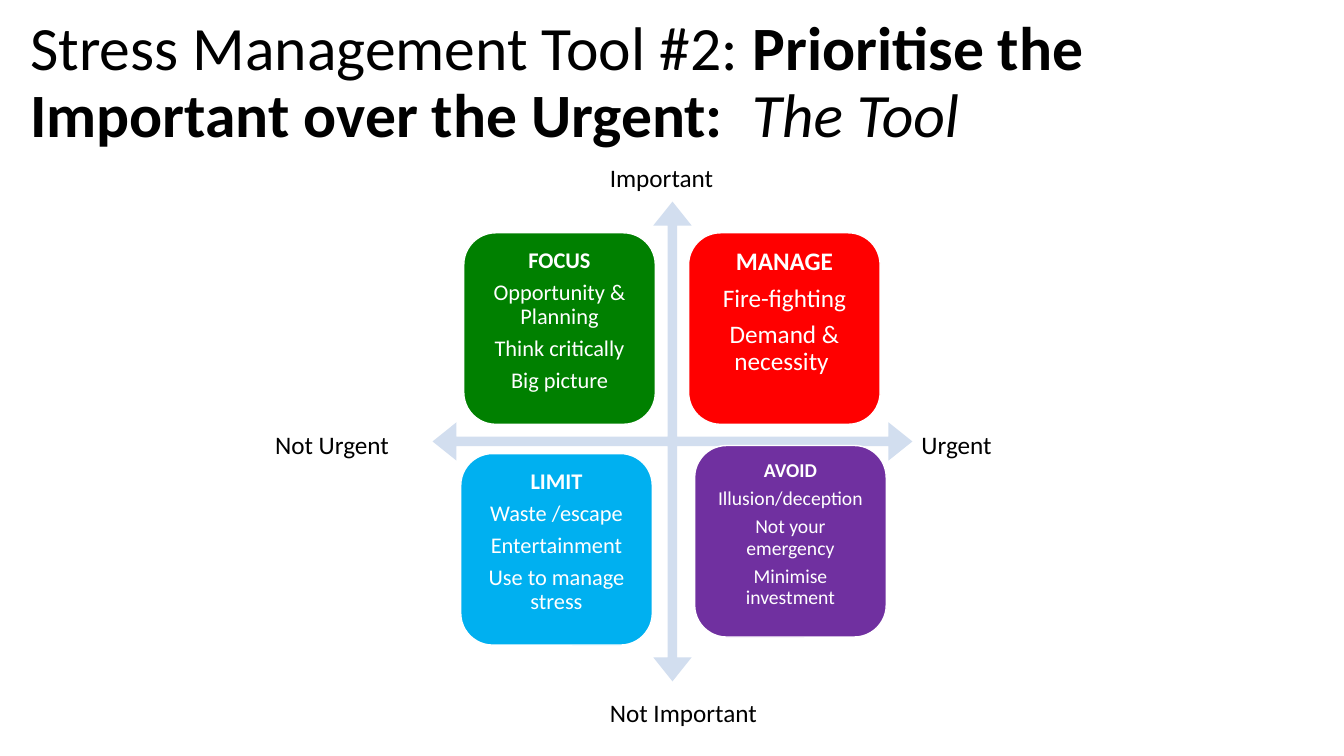
from pptx import Presentation
from pptx import util as u
from pptx.dml.color import RGBColor
from pptx.enum import shapes, text

HUE = {"ink": "000000", "white": "FFFFFF", "axis": "D2DEEF", "focus": "008000",
       "manage": "FF0000", "avoid": "7030A0", "limit": "00B0F0"}
SIDE = 1.9  # edge of a quadrant tile, inches


def paint(part, hue):
    part.solid()
    part.fore_color.rgb = RGBColor.from_string(HUE[hue])


def write(para, words, size, hue, bold=False, italic=False):
    run = para.add_run()
    run.text = words
    look = {"name": "Calibri", "size": u.Pt(size), "bold": bold, "italic": italic}
    for key, value in look.items():
        setattr(run.font, key, value)
    paint(run.font.fill, hue)


deck = Presentation()
deck.slide_width, deck.slide_height = u.Inches(13.33), u.Inches(7.5)
slide = deck.slides.add_slide(deck.slide_layouts[5])

# Title
title = slide.shapes.title
title.left, title.top, title.width, title.height = map(u.Inches, (0.2, 0.11, 11.5, 1.45))
frame = title.text_frame
frame.auto_size = text.MSO_AUTO_SIZE.NONE
frame.vertical_anchor = text.MSO_ANCHOR.MIDDLE
para = frame.paragraphs[0]
para.alignment, para.line_spacing = text.PP_ALIGN.LEFT, 0.9
for words, bold, italic in (
        ("Stress Management Tool #2: ", False, False),
        ("Prioritise the Important over the Urgent:  ", True, False),
        ("The Tool", False, True)):
    write(para, words, 44, "ink", bold, italic)

# Crossed axes
cross = slide.shapes.add_shape(shapes.MSO_SHAPE.QUAD_ARROW,
                               *map(u.Inches, (4.29, 2, 4.76, 4.76)))
for i, share in enumerate((0.02, 0.04, 0.05)):
    cross.adjustments[i] = share
paint(cross.fill, "axis")
cross.line.fill.background()
cross.shadow.inherit = False

# Quadrants: hue, left, top, text size, inset, heading and lines
tiles = (
    ("focus", 4.6, 2.31, 16, 0.07,
     ("FOCUS", "Opportunity & Planning", "Think critically", "Big picture")),
    ("manage", 6.83, 2.31, 18, 0.07,
     ("MANAGE", "Fire-fighting", "Demand & necessity ")),
    ("avoid", 6.89, 4.42, 14, 0.06,
     ("AVOID", "Illusion/deception", "Not your emergency", "Minimise investment")),
    ("limit", 4.57, 4.5, 16, 0.07,
     ("LIMIT", "Waste /escape", "Entertainment", "Use to manage stress")),
)
for hue, left, top, size, inset, lines in tiles:
    tile = slide.shapes.add_shape(shapes.MSO_SHAPE.ROUNDED_RECTANGLE,
                                  *map(u.Inches, (left, top, SIDE, SIDE)))
    tile.shadow.inherit = False
    paint(tile.fill, hue)
    paint(tile.line.fill, "white")
    tile.line.width = u.Pt(1)
    frame = tile.text_frame
    frame.word_wrap = True
    frame.vertical_anchor = text.MSO_ANCHOR.TOP
    for edge in ("left", "top", "right", "bottom"):
        setattr(frame, f"margin_{edge}", u.Inches(inset))
    for i, words in enumerate(lines):
        para = frame.add_paragraph() if i else frame.paragraphs[0]
        para.alignment, para.line_spacing = text.PP_ALIGN.CENTER, 0.9
        para.space_after = u.Pt(0.35 * size)
        write(para, words, size, "white", bold=i == 0)

# Axis ends
for words, left, top, width in (
        ("Not Urgent", 2.63, 4.21, 1.5), ("Urgent", 9.04, 4.21, 1.38),
        ("Not Important", 5.95, 6.87, 2.23), ("Important", 5.95, 1.56, 1.33)):
    label = slide.shapes.add_textbox(*map(u.Inches, (left, top, width, 0.4)))
    frame = label.text_frame
    frame.word_wrap = True
    frame.auto_size = text.MSO_AUTO_SIZE.SHAPE_TO_FIT_TEXT
    write(frame.paragraphs[0], words, 18, "ink")

deck.save("out.pptx")
